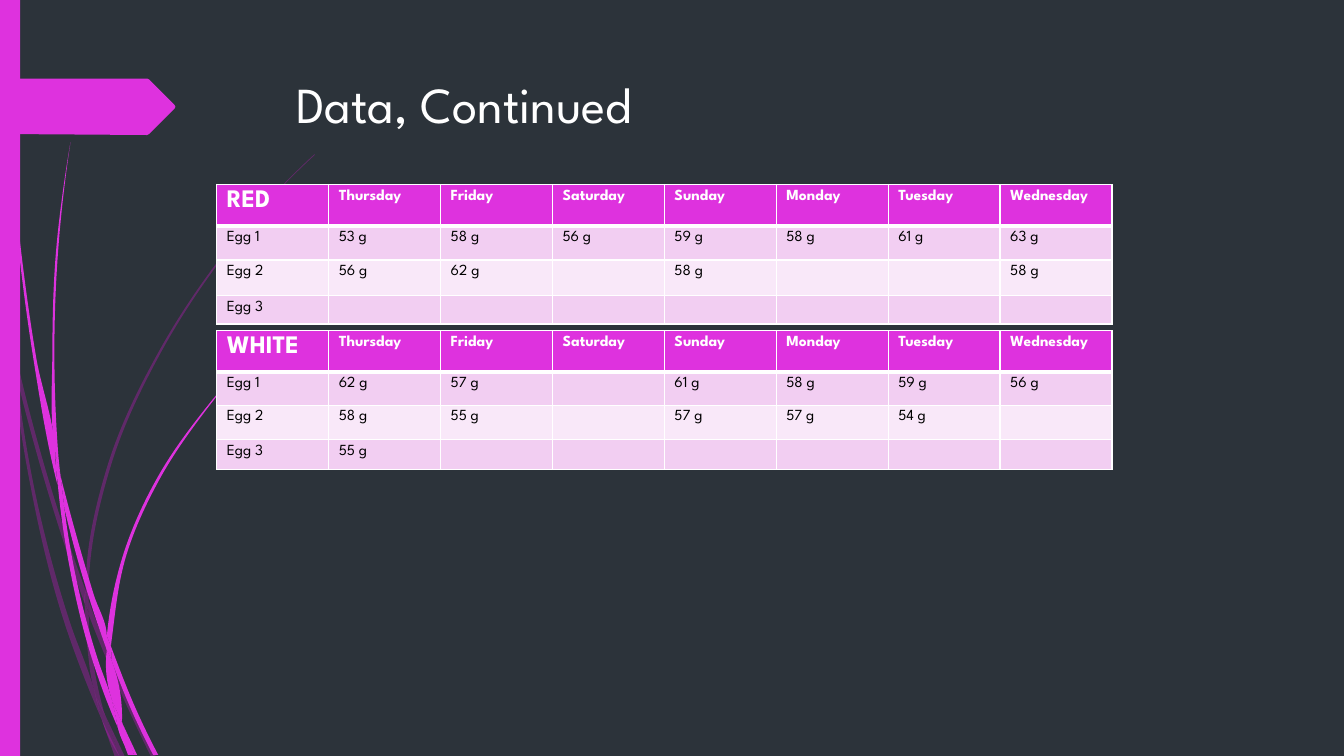
from math import hypot

from lxml import etree
from pptx import Presentation
from pptx.dml.color import RGBColor
from pptx.enum.shapes import MSO_SHAPE
from pptx.enum.text import MSO_ANCHOR
from pptx.oxml.ns import qn
from pptx.util import Inches, Pt

RECTANGLE = MSO_SHAPE.RECTANGLE
TOP = MSO_ANCHOR.TOP

SLATE = RGBColor(0x2C, 0x33, 0x3A)
MAGENTA = RGBColor(0xDE, 0x32, 0xDE)
PLUM = RGBColor(0xB0, 0x1C, 0xB0)
PINK = RGBColor(0xF2, 0xCE, 0xF2)
PALE_PINK = RGBColor(0xF9, 0xE8, 0xF9)
WHITE = RGBColor(0xFF, 0xFF, 0xFF)
BLACK = RGBColor(0, 0, 0)

FONT = "League Spartan"
UNIT = Inches(0.01)

# Each blade of grass has two edges, in hundredths of an inch.
FADED_BLADES = [
    ([(11, 350), (9, 322), (0, 282)], [(0, 299), (10, 344), (11, 350)]),
    ([(17, 376), (58, 522), (84, 599)], [(85, 586), (62, 520), (14, 345)]),
    ([(88, 610), (123, 694), (150, 751)], [(155, 751), (127, 692), (92, 607), (88, 596)]),
    ([(105, 711), (119, 751)], [(124, 751)]),
    ([(11, 350), (28, 470), (65, 621), (92, 693), (101, 714)],
     [(99, 707), (93, 683), (70, 619), (31, 469), (17, 376)]),
    ([(84, 599), (87, 646), (93, 683), (96, 692), (105, 711)],
     [(103, 706), (91, 646), (88, 610), (88, 608)]),
    ([(85, 586), (85, 584), (107, 461), (158, 348), (228, 244), (268, 197), (289, 175), (312, 153)],
     [(312, 154), (290, 175), (268, 198), (229, 245), (160, 349), (110, 462), (88, 584), (88, 596)]),
    ([(101, 714), (114, 751)], [(119, 751)]),
    ([(85, 586), (84, 599), (88, 608), (88, 610)], [(88, 596)]),
    ([(93, 683), (99, 707), (101, 714), (119, 751)], [(105, 711), (96, 692)]),
]
BRIGHT_BLADES = [
    ([(3, 0), (4, 48), (7, 110), (17, 233), (33, 355), (56, 477), (57, 481)],
     [(55, 457), (55, 453), (36, 355), (19, 232), (8, 109), (5, 48), (4, 0)]),
    ([(64, 505), (88, 592), (106, 645)], [(106, 633), (106, 631), (93, 590), (60, 472)]),
    ([(111, 656), (132, 708), (152, 749)], [(157, 749), (136, 706), (113, 649), (110, 641)]),
    ([(57, 477), (68, 557), (93, 659), (111, 708), (117, 722)],
     [(116, 717), (110, 691), (98, 657), (72, 556), (64, 505)]),
    ([(70, 141), (62, 193), (56, 245), (52, 349), (55, 449), (60, 472)],
     [(58, 453), (54, 349), (58, 245), (63, 193), (70, 141)]),
    ([(122, 719), (133, 749)], [(136, 749)]),
    ([(55, 449), (55, 453), (57, 477), (64, 505)], [(60, 472)]),
    ([(106, 631), (122, 551), (156, 474), (204, 405), (231, 373), (245, 358), (260, 344)],
     [(261, 344), (245, 359), (231, 374), (205, 406), (158, 476), (125, 552), (111, 633), (110, 641)]),
    ([(117, 722), (127, 749)], [(131, 749)]),
    ([(106, 645), (110, 691), (116, 706), (122, 719)], [(121, 716), (111, 656), (109, 651)]),
    ([(106, 631), (106, 645), (109, 651), (111, 656)], [(110, 641)]),
    ([(110, 691), (116, 717), (117, 722), (130, 749)], [(133, 749), (122, 719), (116, 706)]),
]
TAG_OUTLINE = [(0, 0), (146, 0), (148, 1), (173, 26), (174, 28), (173, 30),
               (148, 55), (146, 56), (0, 55)]

DAYS = ["Thursday", "Friday", "Saturday", "Sunday", "Monday", "Tuesday", "Wednesday"]
RED_EGGS = [
    ["RED"] + DAYS,
    ["Egg 1", "53 g", "58 g", "56 g", "59 g", "58 g", "61 g", "63 g"],
    ["Egg 2", "56 g", "62 g", "", "58 g", "", "", "58 g"],
    ["Egg 3"] + [""] * 7,
]
WHITE_EGGS = [
    ["WHITE"] + DAYS,
    ["Egg 1", "62 g", "57 g", "", "61 g", "58 g", "59 g", "56 g"],
    ["Egg 2", "58 g", "55 g", "", "57 g", "57 g", "54 g", ""],
    ["Egg 3", "55 g"] + [""] * 6,
]


def bezier_edge(anchors):
    """Return the anchors with two control points between each pair."""
    spans = [complex(*end) - complex(*start) for start, end in zip(anchors, anchors[1:])]
    if not spans:
        return list(anchors)
    chords = [span / abs(span) for span in spans]
    headings = [chords[0]]
    for i in range(1, len(spans)):
        blend = chords[i - 1] / abs(spans[i - 1]) + chords[i] / abs(spans[i])
        headings.append(blend / abs(blend))
    headings.append(chords[-1])
    if len(spans) > 1:
        headings[0] = chords[0] ** 2 / headings[1]
        headings[-1] = chords[-1] ** 2 / headings[-2]
    points = [anchors[0]]
    for i, span in enumerate(spans):
        reach = abs(span) / 3
        leave = complex(*anchors[i]) + reach * headings[i]
        arrive = complex(*anchors[i + 1]) - reach * headings[i + 1]
        points += [(leave.real, leave.imag), (arrive.real, arrive.imag), anchors[i + 1]]
    return points


def paint(shape, color, opacity=100):
    shape.shadow.inherit = False
    shape.fill.solid()
    shape.fill.fore_color.rgb = color
    shape.line.fill.background()
    if opacity < 100:
        tint = shape.fill._xPr.find(".//" + qn("a:srgbClr"))
        etree.SubElement(tint, qn("a:alpha"), val=str(opacity * 1000))


def add_outline(slide, left, top, points):
    corners = [(left + x * UNIT, top + y * UNIT) for x, y in points]
    builder = slide.shapes.build_freeform(*corners[0], scale=1.0)
    builder.add_line_segments(corners[1:], close=True)
    return builder.convert_to_shape()


def bend_lines(shape):
    """Turn every three line segments into one cubic curve."""
    lines = list(shape._element.iter(qn("a:lnTo")))
    for first in range(0, len(lines), 3):
        curve = etree.Element(qn("a:cubicBezTo"))
        lines[first].addprevious(curve)
        for line in lines[first:first + 3]:
            curve.append(line[0])
            line.getparent().remove(line)


def add_grass(slide, left, top, blades, color, opacity=100):
    for outward, back in blades:
        tip = [outward[-1], back[0]]
        root = [back[-1], outward[0]]
        points = bezier_edge(outward)
        points += tip + bezier_edge(back)
        if hypot(root[0][0] - root[1][0], root[0][1] - root[1][1]) > 0:
            points += root + [outward[0]]
        blade = add_outline(slide, left, top, points)
        bend_lines(blade)
        paint(blade, color, opacity)


def add_side_decoration(slide, left, top, height):
    add_grass(slide, left, top, FADED_BLADES, PLUM, 40)
    add_grass(slide, left, top, BRIGHT_BLADES, MAGENTA)
    paint(slide.shapes.add_shape(RECTANGLE, left, top, Inches(0.2), height), MAGENTA)
    paint(add_outline(slide, left, top + Inches(0.78), TAG_OUTLINE), MAGENTA)


def style_run(run, size, color, bold=False):
    run.font.name = FONT
    run.font.size = Pt(size)
    run.font.bold = bold
    run.font.color.rgb = color


def add_title(slide, left, top, width, height):
    frame = slide.shapes.add_textbox(left, top, width, height).text_frame
    frame.word_wrap = True
    frame.vertical_anchor = TOP
    frame.text = "Data, Continued"
    style_run(frame.paragraphs[0].runs[0], 36, WHITE)


def set_borders(cell, widths):
    """Draw white borders; widths maps each side to points."""
    properties = cell._tc.get_or_add_tcPr()
    for position, (side, width) in enumerate(widths.items()):
        line = etree.Element(qn("a:" + side), w=str(Pt(width)))
        fill = etree.SubElement(line, qn("a:solidFill"))
        etree.SubElement(fill, qn("a:srgbClr"), val=str(WHITE))
        properties.insert(position, line)


def add_egg_table(slide, left, top, width, row_heights, rows):
    height = Inches(sum(row_heights))
    table = slide.shapes.add_table(len(rows), len(rows[0]), left, top, width, height).table
    for r, values in enumerate(rows):
        table.rows[r].height = Inches(row_heights[r])
        header = r == 0
        for c, value in enumerate(values):
            cell = table.cell(r, c)
            cell.fill.solid()
            cell.fill.fore_color.rgb = MAGENTA if header else (PALE_PINK, PINK)[r % 2]
            set_borders(cell, {"lnL": 1, "lnR": 1, "lnT": 3 if r == 1 else 1,
                               "lnB": 3 if header else 1})
            paragraph = cell.text_frame.paragraphs[0]
            if value:
                paragraph.text = value
                style_run(paragraph.runs[0], 18 if header and c == 0 else 11,
                          WHITE if header else BLACK, header)
            else:
                etree.SubElement(paragraph._p, qn("a:endParaRPr"), sz="1100")


def main():
    deck = Presentation()
    deck.slide_width, deck.slide_height = Inches(13.33), Inches(7.5)
    slide = deck.slides.add_slide(deck.slide_layouts[6])
    slide.background.fill.solid()
    slide.background.fill.fore_color.rgb = SLATE
    add_side_decoration(slide, 0, 0, deck.slide_height)
    add_title(slide, Inches(2.84), Inches(0.68), Inches(9.75), Inches(1.4))
    table_left, table_width = Inches(2.15), Inches(8.88)
    add_egg_table(slide, table_left, Inches(1.83), table_width, [0.41, 0.34, 0.35, 0.28], RED_EGGS)
    add_egg_table(slide, table_left, Inches(3.28), table_width, [0.41, 0.33, 0.34, 0.3], WHITE_EGGS)
    deck.save("out.pptx")


if __name__ == "__main__":
    main()
